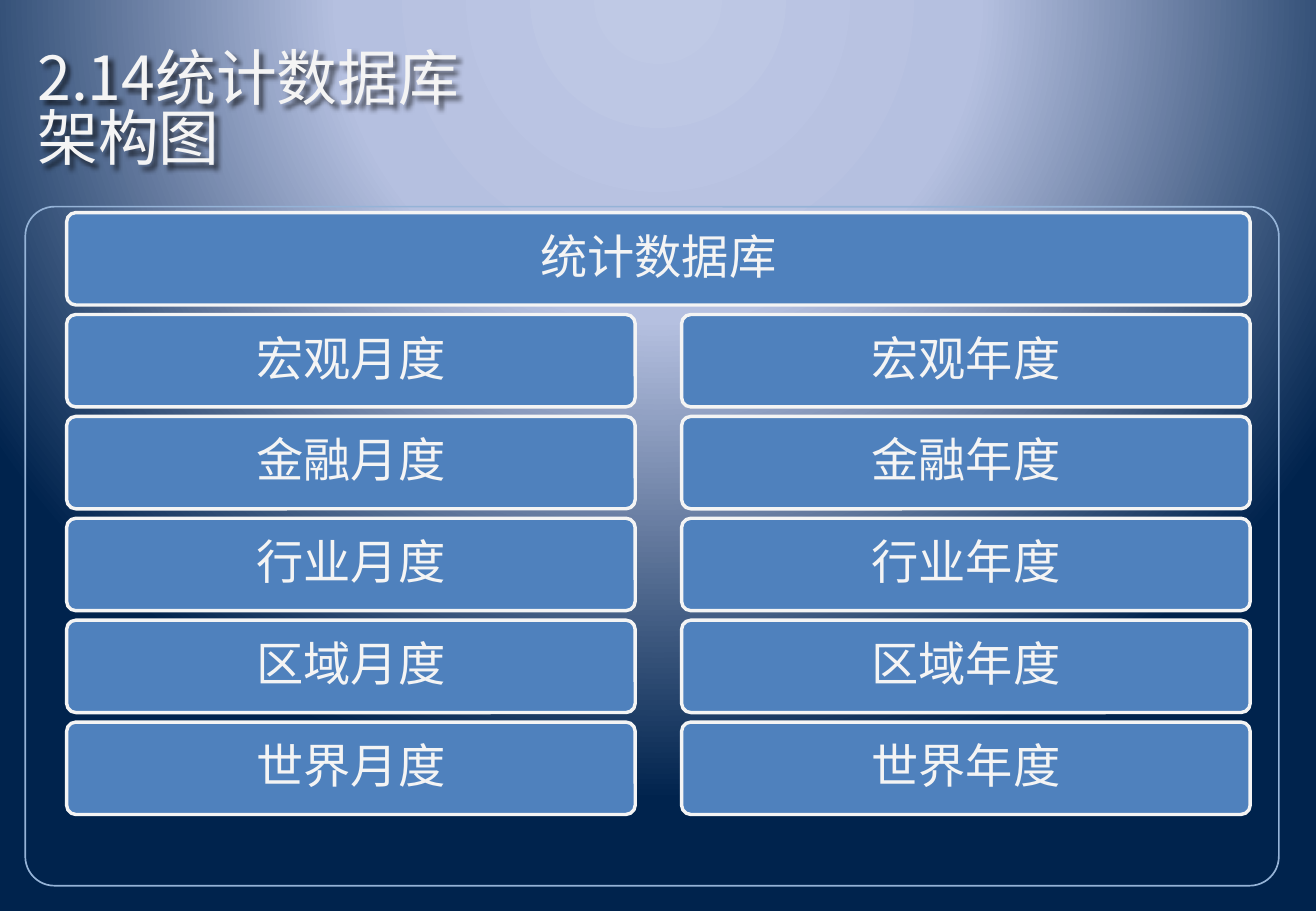
from dataclasses import dataclass
from lxml import etree
from pptx import Presentation
from pptx.dml.color import RGBColor
from pptx.enum import shapes, text
from pptx.oxml import ns
from pptx.util import Pt

TITLE = "2.14统计数据库\v架构图"
ROOT = "统计数据库"
SUBJECTS = ["宏观", "金融", "行业", "区域", "世界"]
PERIODS = ["月度", "年度"]


@dataclass(frozen=True)
class Theme:
    light: str = "F4F4F4"
    block: str = "4F81BD"
    frame: str = "95B3D7"
    glow: tuple = ((0, "BFC9E5"), (40, "B5C0E0"), (100, "00234D"))
    title_size: float = 36
    block_size: float = 28
    title_font: str = "Noto Sans CJK SC"
    block_font: str = "Calibri"
    asian_font: str = "Noto Sans CJK SC"


THEME = Theme()
SLIDE_WIDTH, SLIDE_HEIGHT = 780, 540
FRAME = (15, 122.5, 743, 402.5)
TITLE_BOX = (15, 21.5, 743, 90)
LEFT, TOP, WIDTH = 39.5, 126, 701.5
BLOCK_HEIGHT, ROW_GAP, COLUMN_GAP = 54.8, 5.6, 27.5


def add_node(parent, tag, **attributes):
    node = etree.SubElement(parent, ns.qn(tag))
    for name, value in attributes.items():
        node.set(name, str(value))
    return node


def write(box, content, *, size, font, align, spacing, inset):
    frame = box.text_frame
    frame.text = content
    frame.word_wrap = True
    frame.auto_size = text.MSO_AUTO_SIZE.NONE
    frame.vertical_anchor = text.MSO_ANCHOR.MIDDLE
    frame.margin_left = frame.margin_right = Pt(inset)
    frame.margin_top = frame.margin_bottom = Pt(inset / 2)
    para = frame.paragraphs[0]
    para.alignment = align
    para.line_spacing = spacing
    for span in para.runs:
        span.font.size = Pt(size)
        span.font.name = font
        span.font.color.rgb = RGBColor.from_string(THEME.light)
        add_node(span.font._element, "a:ea", typeface=THEME.asian_font)


def add_panel(page, place, *, radius, line, line_width, fill=None):
    panel = page.shapes.add_shape(
        shapes.MSO_SHAPE.ROUNDED_RECTANGLE, *map(Pt, place))
    panel.adjustments[0] = radius
    panel.shadow.inherit = False
    panel.line.color.rgb = RGBColor.from_string(line)
    panel.line.width = Pt(line_width)
    if fill:
        panel.fill.solid()
        panel.fill.fore_color.rgb = RGBColor.from_string(fill)
    else:
        panel.fill.background()
    return panel


def add_block(page, label, column, row, columns):
    width = (WIDTH - COLUMN_GAP * (columns - 1)) / columns
    left = LEFT + column * (width + COLUMN_GAP)
    top = TOP + row * (BLOCK_HEIGHT + ROW_GAP)
    block = add_panel(page, (left, top, width, BLOCK_HEIGHT), radius=0.1,
                      line=THEME.light, line_width=2, fill=THEME.block)
    write(block, label, size=THEME.block_size, font=THEME.block_font,
          align=text.PP_ALIGN.CENTER, spacing=0.9, inset=8.4)


def paint_background(page):
    page.background.fill.gradient()
    gradient = next(page.element.iter(ns.qn("a:gradFill")))
    for child in list(gradient):
        gradient.remove(child)
    stops = add_node(gradient, "a:gsLst")
    for position, color in THEME.glow:
        stop = add_node(stops, "a:gs", pos=position * 1000)
        add_node(stop, "a:srgbClr", val=color)
    glow = add_node(gradient, "a:path", path="circle")
    add_node(glow, "a:fillToRect", l=50000, t=-80000, r=50000, b=180000)


def add_title(page):
    title = page.shapes.title
    title.left, title.top, title.width, title.height = map(Pt, TITLE_BOX)
    write(title, TITLE, size=THEME.title_size, font=THEME.title_font,
          align=text.PP_ALIGN.LEFT, spacing=0.83, inset=7.2)
    title.shadow.inherit = False
    effects = title.element.spPr.find(ns.qn("a:effectLst"))
    shadow = add_node(effects, "a:outerShdw", blurRad=Pt(3), dist=Pt(3),
                      dir=2700000, algn="tl", rotWithShape=0)
    color = add_node(shadow, "a:srgbClr", val="000000")
    add_node(color, "a:alpha", val=60000)


def main():
    deck = Presentation()
    deck.slide_width, deck.slide_height = Pt(SLIDE_WIDTH), Pt(SLIDE_HEIGHT)
    page = deck.slides.add_slide(deck.slide_layouts[5])
    paint_background(page)
    add_panel(page, FRAME, radius=0.043, line=THEME.frame, line_width=1)
    add_title(page)
    add_block(page, ROOT, 0, 0, 1)
    for column, period in enumerate(PERIODS):
        for row, subject in enumerate(SUBJECTS, start=1):
            add_block(page, subject + period, column, row, len(PERIODS))
    deck.save("out.pptx")


if __name__ == "__main__":
    main()
